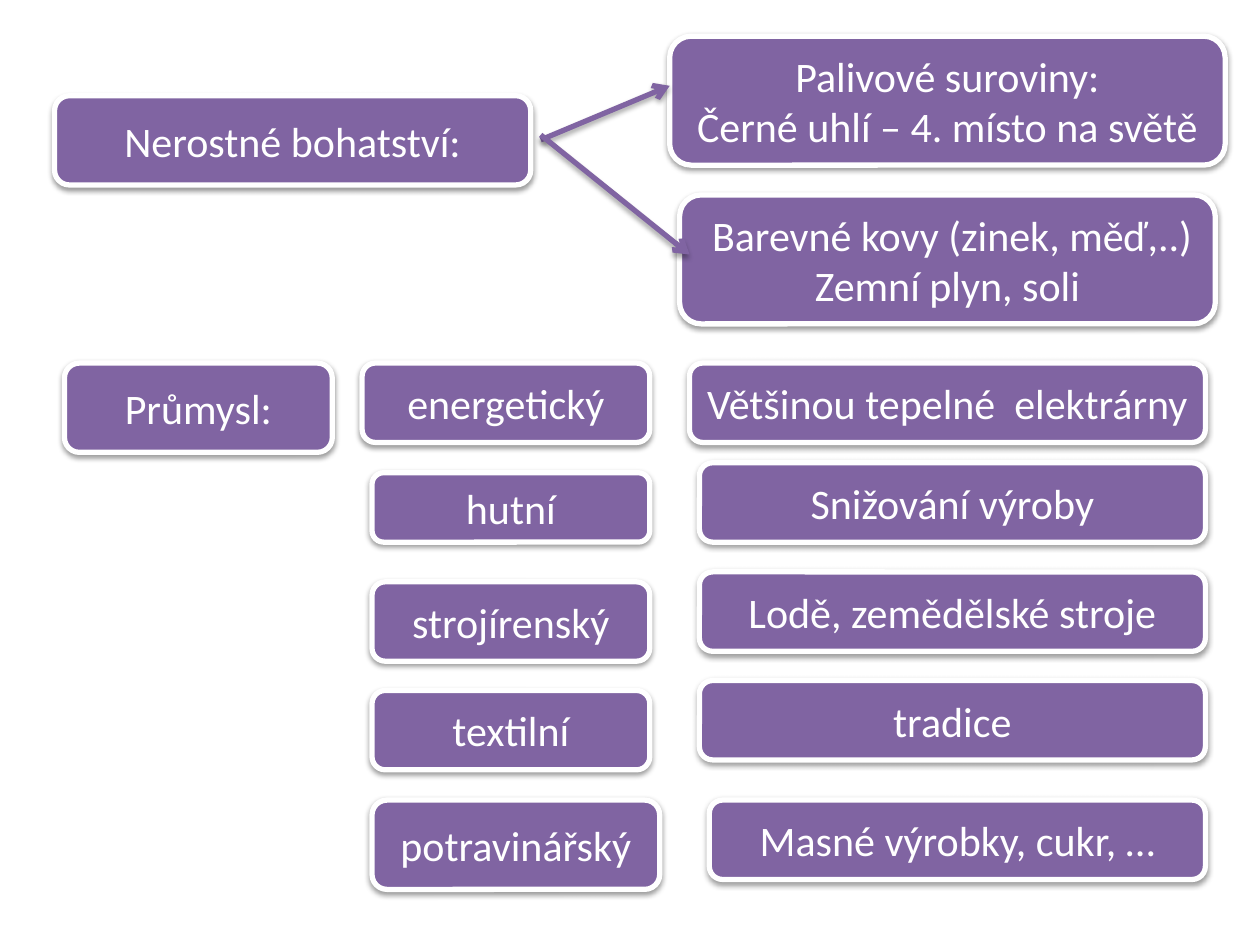
"""Build a slide on mineral wealth and branches of industry."""
from lxml.etree import SubElement
from pptx import Presentation
from pptx.dml.color import RGBColor
from pptx.enum.shapes import MSO_CONNECTOR, MSO_SHAPE
from pptx.enum.text import MSO_ANCHOR, PP_ALIGN
from pptx.oxml.ns import qn
from pptx.util import Cm, Pt

COLORS = {"fill": "8064A2", "edge": "FFFFFF", "text": "FFFFFF", "shade": "000000"}


def tone(name):
    return RGBColor.from_string(COLORS[name])


def write(frame, text, size=24, font="Calibri", color="text", align=PP_ALIGN.CENTER):
    frame.word_wrap = True
    frame.vertical_anchor = MSO_ANCHOR.MIDDLE
    frame.text = text
    for para in frame.paragraphs:
        para.alignment = align
        para.font.size = Pt(size)
        para.font.name = font
        para.font.color.rgb = tone(color)


def shade(shape, alpha, dist):
    props = shape._element.spPr
    for old in props.findall(qn("a:effectLst")):
        props.remove(old)
    effects = SubElement(props, qn("a:effectLst"))
    outer = SubElement(effects, qn("a:outerShdw"), blurRad=str(Pt(3.1)),
                       dist=str(Pt(dist)), dir="5400000", rotWithShape="0")
    color = SubElement(outer, qn("a:srgbClr"), val=COLORS["shade"])
    SubElement(color, qn("a:alpha"), val=str(alpha * 1000))


class Board:
    def __init__(self, slide, width=3):
        self.slide = slide
        self.width = Pt(width)

    def box(self, text, left, top, width, height):
        shape = self.slide.shapes.add_shape(
            MSO_SHAPE.ROUNDED_RECTANGLE, Cm(left), Cm(top), Cm(width), Cm(height))
        shape.fill.solid()
        shape.fill.fore_color.rgb = tone("fill")
        shape.line.color.rgb = tone("edge")
        shape.line.width = self.width
        shade(shape, 38, 1.6)
        write(shape.text_frame, text)

    def arrow(self, *ends):
        link = self.slide.shapes.add_connector(
            MSO_CONNECTOR.STRAIGHT, *[Cm(end) for end in ends])
        link.line.color.rgb = tone("fill")
        link.line.width = self.width
        SubElement(link.line._get_or_add_ln(), qn("a:tailEnd"), type="arrow")
        shade(link, 35, 1.8)


def main():
    deck = Presentation()
    deck.slide_width, deck.slide_height = Cm(25.4), Cm(19.05)
    board = Board(deck.slides.add_slide(deck.slide_layouts[6]))

    board.box("Nerostné bohatství:", 1.1, 1.93, 9.6, 1.8)
    board.box("Palivové suroviny:\nČerné uhlí – 4. místo na světě", 13.5, 0.73, 11.2, 2.6)
    board.box(" Barevné kovy (zinek, měď,..)\nZemní plyn, soli", 13.7, 3.93, 10.8, 2.6)
    board.box("Průmysl:", 1.3, 7.32, 5.4, 1.8)

    branches = [
        ("energetický", 7.3, 7.32, 5.8, 1.6),
        ("hutní", 7.5, 9.53, 5.6, 1.4),
        ("strojírenský", 7.5, 11.73, 5.6, 1.6),
        ("textilní", 7.5, 13.92, 5.6, 1.6),
        ("potravinářský", 7.5, 16.13, 5.8, 1.8),
    ]
    for branch in branches:
        board.box(*branch)

    right = 24.3
    notes = [
        ("Většinou tepelné  elektrárny", 13.9, 7.32),
        ("Snižování výroby", 14.1, 9.33),
        ("Lodě, zemědělské stroje", 14.1, 11.53),
        ("tradice", 14.1, 13.72),
        ("Masné výrobky, cukr, …", 14.3, 16.13),
    ]
    for text, left, top in notes:
        board.box(text, left, top, right - left, 1.6)

    board.arrow(10.9, 2.82, 13.5, 1.73)
    board.arrow(10.9, 2.72, 13.9, 5.13)
    deck.save("out.pptx")


if __name__ == "__main__":
    main()
